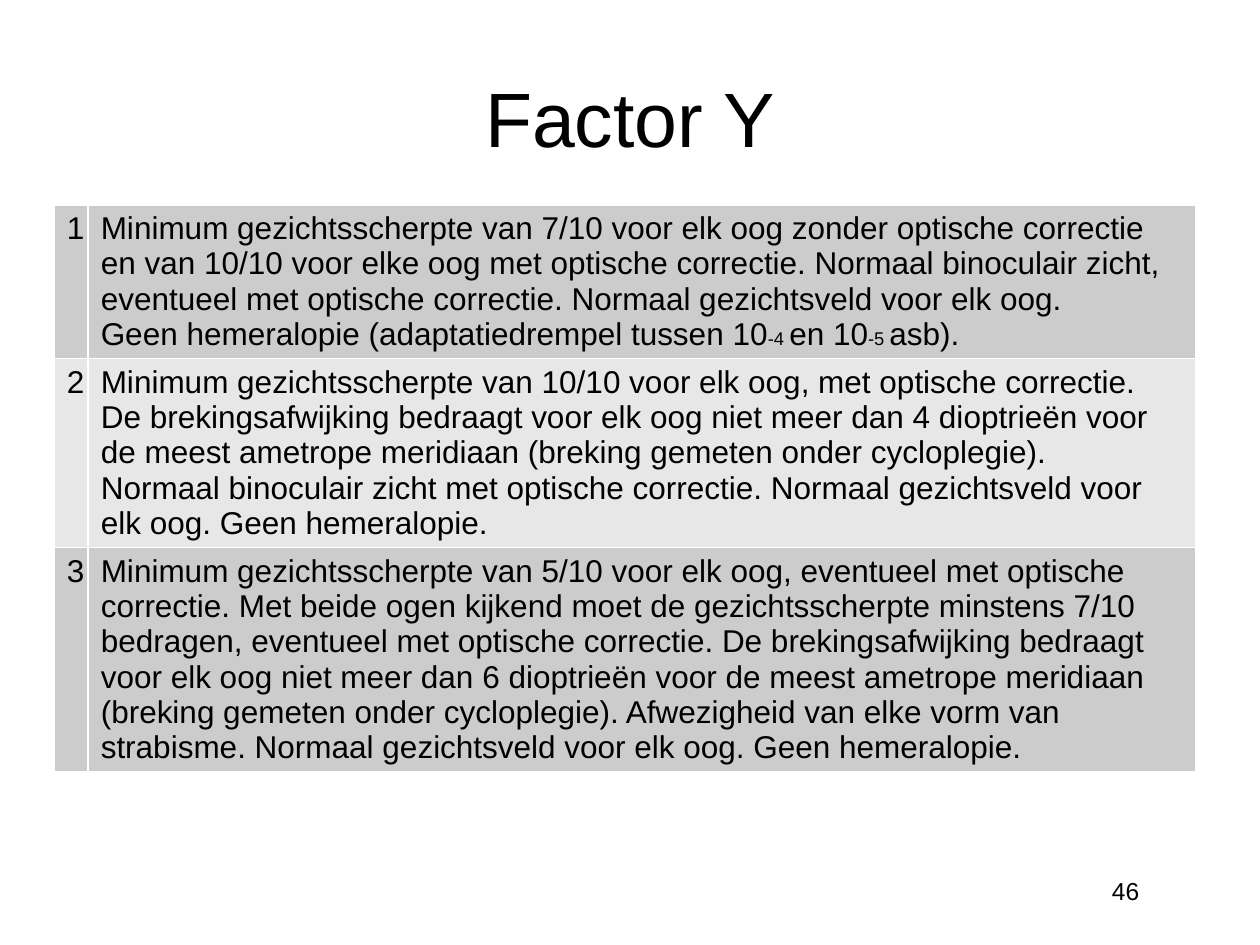
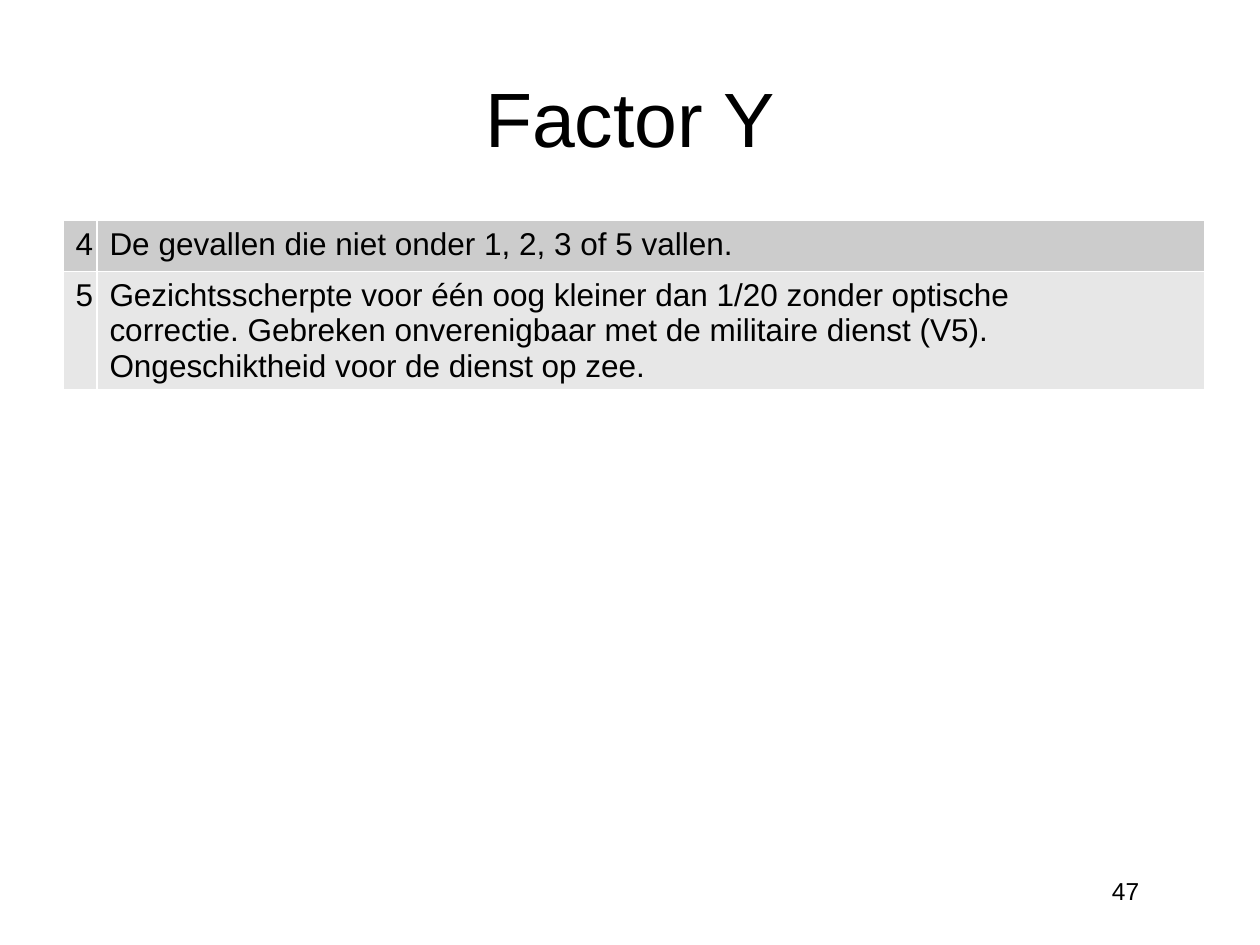
from dataclasses import dataclass

from lxml import etree
from pptx import Presentation
from pptx import util as u
from pptx.dml import color
from pptx.enum import text
from pptx.oxml import ns


@dataclass(frozen=True)
class Theme:
    font: str = "Arial"
    ink: str = "000000"
    rule: str = "FFFFFF"
    bands: tuple = ("CCCCCC", "E7E7E7")
    title: float = 44
    body: float = 18
    small: float = 10.5
    page: float = 14
    line: float = 20.1
    pad: float = 7.2


look = Theme()
HEAD = (36, 21.6, 648, 90)
FOOT = (490.3, 496.8, 167.8, 37.4)
COLS = (19.4, 632.9)

PAGES = [
    (46, (31, 117), [
        (1, 4, [
            "Minimum gezichtsscherpte van 7/10 voor elk oog zonder optische correctie "
            "en van 10/10 voor elke oog met optische correctie. Normaal binoculair zicht, "
            "eventueel met optische correctie. Normaal gezichtsveld voor elk oog.",
            [("Geen hemeralopie (adaptatiedrempel tussen 10", look.body),
             ("-4 ", look.small), ("en 10", look.body),
             ("-5 ", look.small), ("asb).", look.body)],
        ]),
        (2, 5, [
            "Minimum gezichtsscherpte van 10/10 voor elk oog, met optische correctie.",
            "De brekingsafwijking bedraagt voor elk oog niet meer dan 4 dioptrieën voor "
            "de meest ametrope meridiaan (breking gemeten onder cycloplegie).",
            "Normaal binoculair zicht met optische correctie. Normaal gezichtsveld voor "
            "elk oog. Geen hemeralopie.",
        ]),
        (3, 6, [
            "Minimum gezichtsscherpte van 5/10 voor elk oog, eventueel met optische "
            "correctie. Met beide ogen kijkend moet de gezichtsscherpte minstens 7/10",
            "bedragen, eventueel met optische correctie. De brekingsafwijking bedraagt "
            "voor elk oog niet meer dan 6 dioptrieën voor de meest ametrope meridiaan "
            "(breking gemeten onder cycloplegie). Afwezigheid van elke vorm van "
            "strabisme. Normaal gezichtsveld voor elk oog. Geen hemeralopie.",
        ]),
    ]),
    (47, (36, 126), [
        (4, 1, ["De gevallen die niet onder 1, 2, 3 of 5 vallen."]),
        (5, 3, [
            "Gezichtsscherpte voor één oog kleiner dan 1/20 zonder optische",
            "correctie. Gebreken onverenigbaar met de militaire dienst (V5).",
            "Ongeschiktheid voor de dienst op zee.",
        ]),
    ]),
]


def write(frame, paras, size, align=text.PP_ALIGN.LEFT):
    for i, runs in enumerate(paras):
        para = frame.add_paragraph() if i else frame.paragraphs[0]
        para.alignment = align
        if isinstance(runs, str):
            runs = [(runs, size)]
        for words, points in runs:
            run = para.add_run()
            run.text = words
            run.font.name = look.font
            run.font.size = u.Pt(points)
            run.font.color.rgb = color.RGBColor.from_string(look.ink)


def edge(cell):
    props = cell._tc.get_or_add_tcPr()
    for i, side in enumerate(("lnL", "lnR", "lnT", "lnB")):
        line = etree.Element(ns.qn(f"a:{side}"), w=str(u.Pt(1)))
        fill = etree.SubElement(line, ns.qn("a:solidFill"))
        etree.SubElement(fill, ns.qn("a:srgbClr"), val=look.rule)
        props.insert(i, line)


def head(slide, box):
    title = slide.shapes.title
    title.left, title.top, title.width, title.height = map(u.Pt, box)
    title.text_frame.vertical_anchor = text.MSO_ANCHOR.MIDDLE
    write(title.text_frame, ["Factor Y"], look.title, text.PP_ALIGN.CENTER)


def grid(slide, spot, rows):
    highs = [max(29.2, 7.2 + look.line * lines) for _, lines, _ in rows]
    box = (*spot, sum(COLS), sum(highs))
    table = slide.shapes.add_table(len(rows), len(COLS), *map(u.Pt, box)).table
    table.first_row = table.horz_banding = False
    for col, wide in zip(table.columns, COLS):
        col.width = u.Pt(wide)
    for i, (grade, _, paras) in enumerate(rows):
        table.rows[i].height = u.Pt(highs[i])
        for cell, words in zip(table.rows[i].cells, ([str(grade)], paras)):
            cell.margin_left = cell.margin_right = u.Pt(look.pad)
            cell.fill.solid()
            cell.fill.fore_color.rgb = color.RGBColor.from_string(look.bands[i % 2])
            edge(cell)
            write(cell.text_frame, words, look.body)


def foot(slide, box, page):
    frame = slide.shapes.add_textbox(*map(u.Pt, box)).text_frame
    frame.word_wrap = True
    write(frame, [str(page)], look.page, text.PP_ALIGN.RIGHT)


def main():
    deck = Presentation()
    deck.slide_width, deck.slide_height = u.Pt(720), u.Pt(540)
    for page, spot, rows in PAGES:
        slide = deck.slides.add_slide(deck.slide_layouts[5])
        head(slide, HEAD)
        grid(slide, spot, rows)
        foot(slide, FOOT, page)
    deck.save("out.pptx")


if __name__ == "__main__":
    main()
